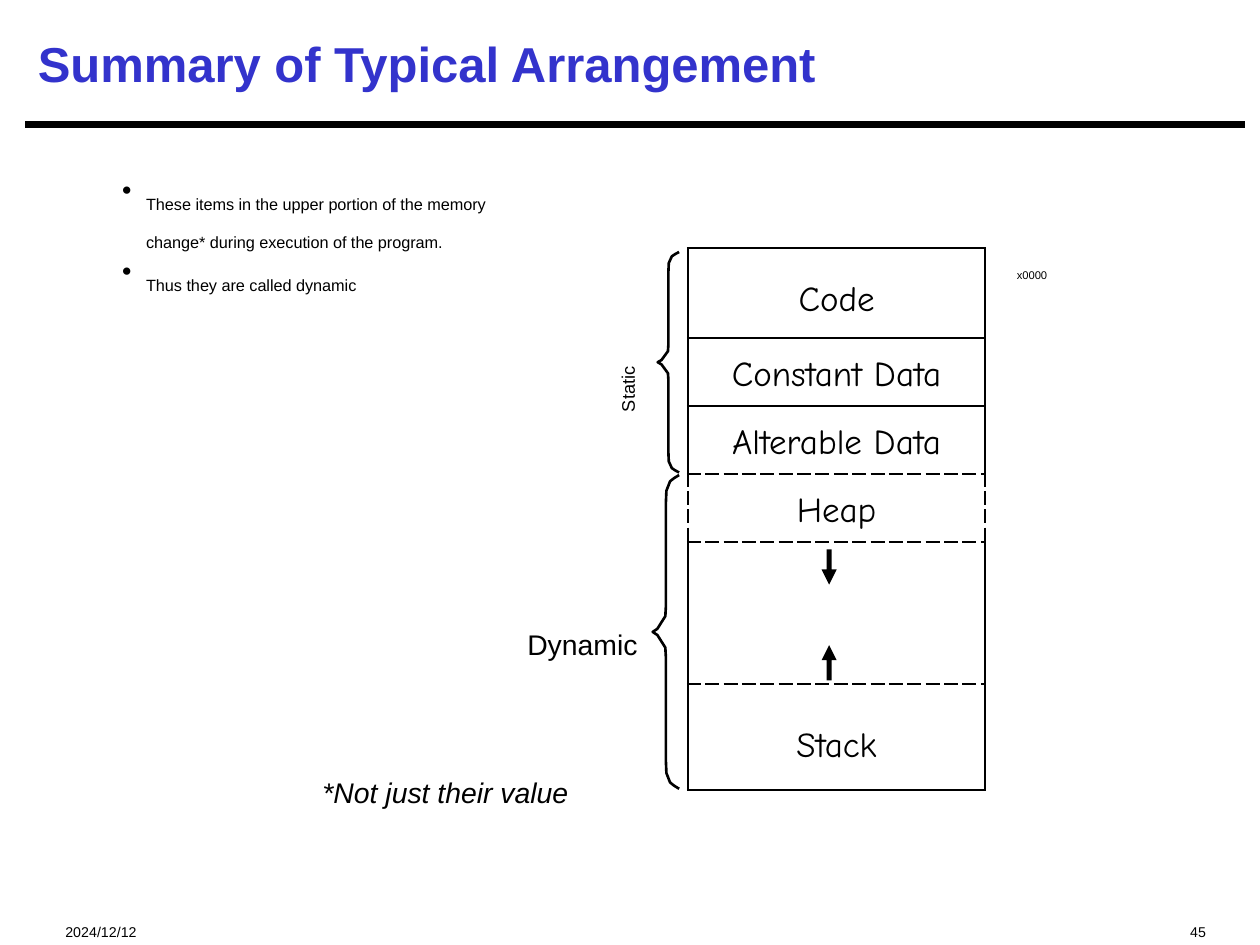
from lxml import etree
from pptx import Presentation
from pptx.dml.color import RGBColor
from pptx.enum.shapes import MSO_CONNECTOR as CONN
from pptx.enum.text import MSO_ANCHOR as ANCHOR, PP_ALIGN as ALIGN
from pptx.oxml.ns import qn
from pptx.util import Inches, Pt

BLACK = RGBColor(0x00, 0x00, 0x00)
BLUE = RGBColor(0x33, 0x33, 0xCC)


def write(tf, text, size, new=False, font="Arial", color=BLACK, bold=False, italic=False,
          align=ALIGN.LEFT, before=0, line=None, baseline=None, bullet=False):
    p = tf.add_paragraph() if new else tf.paragraphs[0]
    p.alignment, p.space_before = align, Pt(before)
    if line:
        p.line_spacing = line
    if bullet:
        pPr = p._p.get_or_add_pPr()
        pPr.set("marL", str(Inches(0.2)))
        pPr.set("indent", str(Inches(-0.19)))
        etree.SubElement(pPr, qn("a:buChar")).set("char", "•")
    r = p.add_run()
    r.text = text
    f = r.font
    f.name, f.size, f.bold, f.italic = font, Pt(size), bold, italic
    f.color.rgb = color
    if baseline:
        r._r.get_or_add_rPr().set("baseline", str(baseline * 1000))


def text_box(x, y, w, h, inset=0.0):
    tf = s.shapes.add_textbox(Inches(x), Inches(y), Inches(w), Inches(h)).text_frame
    tf.word_wrap = True
    tf.margin_left = tf.margin_right = Inches(inset)
    tf.margin_top = tf.margin_bottom = Inches(inset / 2)
    return tf


prs = Presentation()
prs.slide_width, prs.slide_height = Inches(10), Inches(7.5)
s = prs.slides.add_slide(prs.slide_layouts[5])

# Title and rule
title = s.shapes.title
title.left, title.top, title.width, title.height = (Inches(v) for v in (0.2, 0.08, 9.67, 0.84))
title.text_frame.vertical_anchor = ANCHOR.MIDDLE
write(title.text_frame, "Summary of Typical Arrangement", 28, color=BLUE, bold=True)
rule = s.shapes.add_connector(CONN.STRAIGHT, Inches(0.2), Inches(0.99), Inches(9.88), Inches(0.99))
rule.line.color.rgb, rule.line.width = BLACK, Pt(3.75)
etree.SubElement(rule._element.spPr, qn("a:effectLst"))

# Date and slide number
write(text_box(0.42, 7.15, 2.5, 0.27, 0.1), "2024/12/12", 14, baseline=-25)
write(text_box(6.67, 7.15, 3, 0.27, 0.1), "45", 14, align=ALIGN.RIGHT, baseline=-25)

# Bullets
tf = text_box(0.96, 1.39, 3.26, 1.66)
write(tf, "These items in the upper portion of the memory change* during execution of the program.",
      16, before=1, baseline=-25, bullet=True)
write(tf, "Thus they are called dynamic", 16, new=True, before=1.6, line=1.05,
      baseline=-25, bullet=True)

# Memory map: label, row height, top inset, space before
rows = [("Code", 0.71, 0.11, 7.6), ("Constant Data", 0.54, 0.05, 3.8),
        ("Alterable Data", 0.54, 0.05, 3.8), ("Heap", 0.54, 0.05, 3.8),
        ("", 1.13, 0, 0), ("Stack", 0.84, 0.15, 10.6)]
DASHED = {2: "B", 3: "LRTB", 4: "TB", 5: "T"}
table = s.shapes.add_table(len(rows), 1, Inches(5.46), Inches(1.97), Inches(2.36), Inches(4.3)).table
table.first_row = table.horz_banding = False
for i, (label, height, inset, before) in enumerate(rows):
    table.rows[i].height = Inches(height)
    cell = table.cell(i, 0)
    cell.margin_left = cell.margin_right = cell.margin_bottom = 0
    cell.margin_top = Inches(inset)
    cell.vertical_anchor = ANCHOR.MIDDLE
    if label:
        write(cell.text_frame, label, 20, font="Comic Neue", align=ALIGN.CENTER, before=before)
    tcPr = cell._tc.get_or_add_tcPr()
    for side in "LRTB":
        ln = etree.SubElement(tcPr, qn(f"a:ln{side}"), w=str(Pt(1.5)))
        fill = etree.SubElement(ln, qn("a:solidFill"))
        etree.SubElement(fill, qn("a:srgbClr"), val=str(BLACK))
        dash = "sysDash" if side in DASHED.get(i, "") else "solid"
        etree.SubElement(ln, qn("a:prstDash"), val=dash)
    cell.fill.background()

# Braces: half profile as fractions of width and height, mirrored about the tip
HALF = [(1, 0), (0.81, 0.01), (0.66, 0.02), (0.52, 0.05), (0.5, 0.09), (0.5, 0.42),
        (0.48, 0.45), (0.33, 0.47), (0.18, 0.49), (0, 0.5)]
profile = HALF + [(x, 1 - y) for x, y in reversed(HALF[:-1])]
for left, top, width, height in [(5.22, 2, 0.17, 1.75), (5.18, 3.77, 0.21, 2.49)]:
    pts = [(Inches(left + x * width), Inches(top + y * height)) for x, y in profile]
    fb = s.shapes.build_freeform(*pts[0])
    fb.add_line_segments(pts[1:], close=False)
    sp = fb.convert_to_shape()
    sp.shadow.inherit = False
    sp.fill.background()
    sp.line.color.rgb, sp.line.width = BLACK, Pt(1.5)

# Growth arrows: tail position and direction
ARROW = [(-0.02, 0), (0.02, 0), (0.02, 0.16), (0.06, 0.16), (0, 0.28), (-0.06, 0.16), (-0.02, 0.16)]
for tail, direction in [(4.36, 1), (5.4, -1)]:
    pts = [(Inches(6.58 + x), Inches(tail + direction * y)) for x, y in ARROW]
    fb = s.shapes.build_freeform(*pts[0])
    fb.add_line_segments(pts[1:])
    sp = fb.convert_to_shape()
    sp.shadow.inherit = False
    sp.fill.solid()
    sp.fill.fore_color.rgb = BLACK
    sp.line.fill.background()

# Labels beside the map
tf = text_box(4.87, 2.32, 0.2, 0.95)
tf._txBody.bodyPr.set("vert", "vert270")
write(tf, "Static", 18, line=Pt(14.2), baseline=-25)
write(text_box(8.07, 2.03, 1.15, 0.2), "x0000", 11, before=1, baseline=-25)
tf = text_box(2.56, 4.72, 2.5, 1.07)
write(tf, "Dynamic", 28, align=ALIGN.RIGHT, before=1, baseline=-25)
write(tf, "*Not just their value", 28, new=True, italic=True, before=46, baseline=-25)

prs.save("out.pptx")
